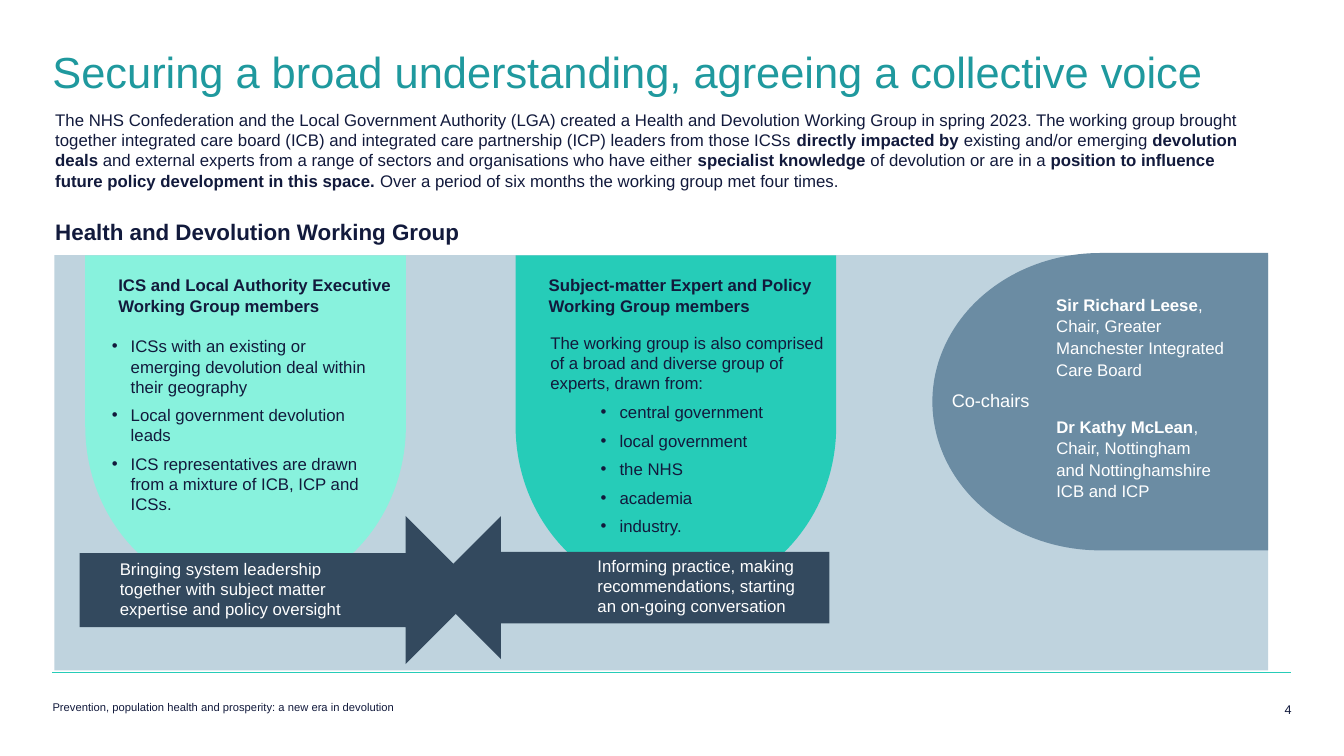
from dataclasses import dataclass

from lxml.etree import SubElement
from pptx import Presentation
from pptx.dml.color import RGBColor
from pptx.enum.shapes import MSO_CONNECTOR as Connector, MSO_SHAPE as Shape
from pptx.enum.text import MSO_ANCHOR as Anchor, PP_ALIGN as Align
from pptx.oxml.ns import qn
from pptx.util import Pt


@dataclass(frozen=True)
class Theme:
    font: str = "Arial"
    ink: str = "121A3C"
    white: str = "FFFFFF"
    title: str = "1F999E"
    teal: str = "26CCB8"
    mint: str = "88F2DD"
    panel: str = "BFD3DE"
    slate: str = "6B8CA3"
    navy: str = "33495E"
    title_size: float = 31
    heading_size: float = 16
    label_size: float = 13
    body_size: float = 12
    number_size: float = 9
    footer_size: float = 8


THEME = Theme()


def inside(box, dx, dy, width, height):
    """Box placed by offset from the top left corner of another box."""
    return box[0] + dx, box[1] + dy, width, height


def add_frame(slide, box, inset=True, anchor=Anchor.TOP):
    frame = slide.shapes.add_textbox(*map(Pt, box)).text_frame
    frame.word_wrap = True
    frame.vertical_anchor = anchor
    if not inset:
        frame.margin_left = frame.margin_right = 0
        frame.margin_top = frame.margin_bottom = 0
    return frame


def write(frame, *runs, size=THEME.body_size, color=THEME.ink, align=Align.LEFT,
          after=0, spacing=None, bullet_indent=None):
    """Add a paragraph; each run is a (text, bold) pair."""
    first = frame.paragraphs[0]
    paragraph = frame.add_paragraph() if first.runs else first
    if bullet_indent:
        props = paragraph._p.get_or_add_pPr()
        props.set("marL", str(Pt(bullet_indent)))
        props.set("indent", str(Pt(-13.5)))
        SubElement(props, qn("a:buFont"), typeface=THEME.font)
        SubElement(props, qn("a:buChar"), char="•")
    paragraph.alignment = align
    paragraph.space_after = Pt(after)
    if spacing:
        paragraph.line_spacing = spacing
    for text, bold in runs:
        run = paragraph.add_run()
        run.text = text
        run.font.name = THEME.font
        run.font.size = Pt(size)
        run.font.bold = bold
        run.font.color.rgb = RGBColor.from_string(color)


def add_block(slide, kind, box, fill, rotation=0):
    """Add a flat shape whose drawn outline fills the box."""
    left, top, width, height = box
    if rotation == 90:
        left, top = left + (width - height) / 2, top + (height - width) / 2
        width, height = height, width
    block = slide.shapes.add_shape(kind, *map(Pt, (left, top, width, height)))
    block.rotation = rotation
    block.shadow.inherit = False
    block.fill.solid()
    block.fill.fore_color.rgb = RGBColor.from_string(fill)
    block.line.fill.background()


def add_footer(slide, box):
    left, top, width, _ = box
    rule = slide.shapes.add_connector(
        Connector.STRAIGHT, Pt(left), Pt(top), Pt(left + width), Pt(top))
    rule.line.color.rgb = RGBColor.from_string(THEME.teal)
    rule.line.width = Pt(0.75)
    SubElement(rule._element.spPr, qn("a:effectLst"))
    report = add_frame(slide, inside(box, 0, 21, 323, 9.5), inset=False)
    write(report, ("Prevention, population health and prosperity: a new era in devolution", False),
          size=THEME.footer_size, spacing=0.9)
    number = add_frame(slide, inside(box, width - 63, 21, 63, 17), inset=False)
    write(number, ("4", False), size=THEME.number_size, align=Align.RIGHT)


def add_intro(slide, box):
    intro = add_frame(slide, box)
    write(
        intro,
        ("The NHS Confederation and the Local Government Authority (LGA) created a Health and "
         "Devolution Working Group in spring 2023. The working group brought together integrated "
         "care board (ICB) and integrated care partnership (ICP) leaders from those ICSs ", False),
        ("directly impacted by ", True),
        ("existing and/or emerging ", False),
        ("devolution deals ", True),
        ("and external experts from a range of sectors and organisations who have either ", False),
        ("specialist knowledge ", True),
        ("of devolution or are in a ", False),
        ("position to influence future policy development in this space. ", True),
        ("Over a period of six months the working group met four times.", False),
        after=20)
    write(intro, ("Health and Devolution Working Group", True), size=THEME.heading_size)


def add_members(slide, box, fill, heading, body_offset, lead, bullets, indent):
    add_block(slide, Shape.FLOWCHART_DELAY, box, fill, rotation=90)
    write(add_frame(slide, inside(box, 16.5, 10.5, 214, 36)), (heading, True))
    body = add_frame(slide, inside(box, *body_offset), inset=False, anchor=Anchor.MIDDLE)
    if lead:
        write(body, (lead, False), after=6)
    for bullet in bullets:
        write(body, (bullet, False), after=6 if lead or bullet != bullets[-1] else 0,
              bullet_indent=indent)


def add_arrow(slide, box, rotation, label_offset, label):
    add_block(slide, Shape.RIGHT_ARROW, box, THEME.navy, rotation)
    write(add_frame(slide, inside(box, *label_offset)), (label, False), color=THEME.white)


def add_chairs(slide, box):
    add_block(slide, Shape.FLOWCHART_DELAY, box, THEME.slate, rotation=180)
    chairs = [
        (25.2, 135.5, "Sir Richard Leese", ", Chair, Greater Manchester Integrated Care Board"),
        (112.3, 129, "Dr Kathy McLean", ", Chair, Nottingham and Nottinghamshire ICB and ICP"),
    ]
    for dy, width, name, role in chairs:
        chair = add_frame(slide, inside(box, 81.4, dy, width, 68.4))
        write(chair, (name, True), (role, False), color=THEME.white, spacing=1.07)
    label = add_frame(slide, inside(box, -63.4, 93.6, 210, 23))
    write(label, ("Co-chairs", False), size=THEME.label_size, color=THEME.white,
          align=Align.CENTER)


def add_working_group(slide, box):
    add_block(slide, Shape.RECTANGLE, box, THEME.panel)
    # Member columns
    add_members(
        slide, inside(box, 22, 0.3, 229, 244), THEME.mint,
        "ICS and Local Authority Executive Working Group members",
        (19, 57.2, 191.5, 128), None,
        ["ICSs with an existing or emerging devolution deal within their geography",
         "Local government devolution leads",
         "ICS representatives are drawn from a mixture of ICB, ICP and ICSs."], 13.5)
    add_members(
        slide, inside(box, 329.4, 0.3, 229, 244), THEME.teal,
        "Subject-matter Expert and Policy Working Group members",
        (24.8, 54.4, 201.6, 147),
        "The working group is also comprised of a broad and diverse group of experts, drawn from:",
        ["central government", "local government", "the NHS", "academia", "industry."], 49.5)
    # Arrows meeting in the middle
    add_arrow(slide, inside(box, 18, 186.4, 285.8, 105.8), 0, (21.6, 26.6, 195, 51),
              "Bringing system leadership together with subject matter expertise "
              "and policy oversight")
    add_arrow(slide, inside(box, 267.8, 186.4, 285.8, 102.2), 180, (113, 24.5, 170.6, 51),
              "Informing practice, making recommendations, starting an on-going conversation")
    # Co-chairs, flush with the right edge
    add_chairs(slide, inside(box, box[2] - 239.8, -1.5, 239.8, 212.4))


def add_title(slide, box):
    title = add_frame(slide, box, inset=False, anchor=Anchor.MIDDLE)
    write(title, ("Securing a broad understanding, agreeing a collective voice", False),
          size=THEME.title_size, color=THEME.title)


def main():
    deck = Presentation()
    deck.slide_width, deck.slide_height = Pt(960), Pt(540)
    slide = deck.slides.add_slide(deck.slide_layouts[6])
    add_footer(slide, (37.5, 480.2, 885, 40))
    add_intro(slide, (32.4, 74.9, 876.2, 105))
    add_working_group(slide, (38.9, 182.2, 866.9, 296.6))
    add_title(slide, (37.5, 28, 884, 45.4))
    deck.save("out.pptx")


if __name__ == "__main__":
    main()
